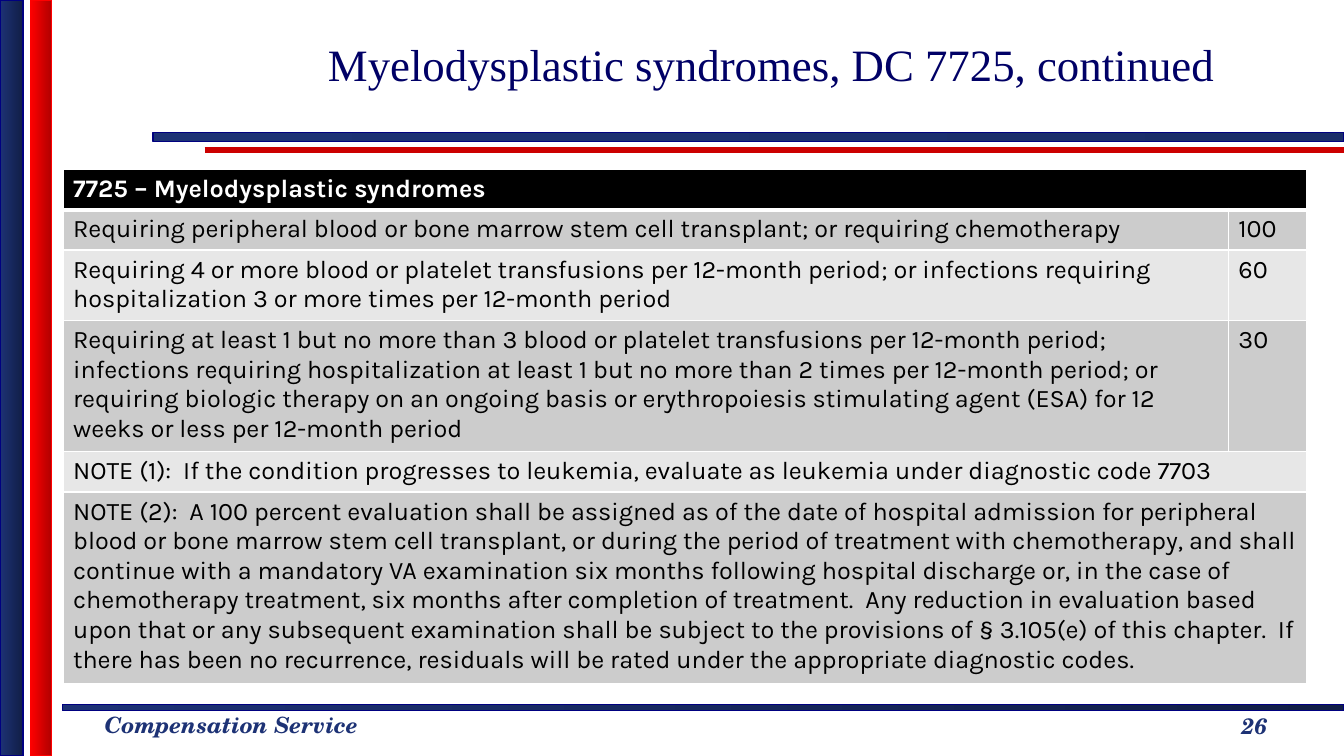
from lxml import etree
from pptx import Presentation
from pptx.dml.color import RGBColor
from pptx.enum.shapes import MSO_CONNECTOR, MSO_SHAPE
from pptx.enum.text import MSO_ANCHOR, PP_ALIGN
from pptx.oxml.ns import qn
from pptx.util import Pt

COLORS = {
    "navy": "1D3275", "navy_dark": "111E46", "navy_mid": "1A2D69",
    "edge": "000080", "red": "FF0000", "red_dark": "B20000", "rule": "CC0000",
    "title": "000066", "black": "000000", "white": "FFFFFF",
    "band_dark": "CCCCCC", "band_light": "E7E7E7",
}
W, H = 960, 540

# Criterion and rating; a row without a rating spans both columns
RATINGS = [
    ("7725 – Myelodysplastic syndromes", None, 28.8),
    ("Requiring peripheral blood or bone marrow stem cell transplant; or "
     "requiring chemotherapy", "100", 28.8),
    ("Requiring 4 or more blood or platelet transfusions per 12-month period; "
     "or infections requiring hospitalization 3 or more times per 12-month "
     "period", "60", 50.4),
    ("Requiring at least 1 but no more than 3 blood or platelet transfusions "
     "per 12-month period; infections requiring hospitalization at least 1 but "
     "no more than 2 times per 12-month period; or requiring biologic therapy "
     "on an ongoing basis or erythropoiesis stimulating agent (ESA) for 12 "
     "weeks or less per 12-month period", "30", 93.6),
    ("NOTE (1):  If the condition progresses to leukemia, evaluate as leukemia "
     "under diagnostic code 7703", None, 28.8),
    ("NOTE (2):  A 100 percent evaluation shall be assigned as of the date of "
     "hospital admission for peripheral blood or bone marrow stem cell "
     "transplant, or during the period of treatment with chemotherapy, and "
     "shall continue with a mandatory VA examination six months following "
     "hospital discharge or, in the case of chemotherapy treatment, six months "
     "after completion of treatment.  Any reduction in evaluation based upon "
     "that or any subsequent examination shall be subject to the provisions of "
     "§ 3.105(e) of this chapter.  If there has been no recurrence, residuals "
     "will be rated under the appropriate diagnostic codes.", None, 136.8),
]


def rgb(name):
    return RGBColor.from_string(COLORS[name])


def add_run(p, text, size, font, color, bold=False, italic=False):
    r = p.add_run()
    r.text = text
    r.font.size, r.font.name = Pt(size), font
    r.font.bold, r.font.italic = bold, italic
    r.font.color.rgb = rgb(color)


def add_bar(s, x, y, w, h, start, end, edge):
    bar = s.shapes.add_shape(MSO_SHAPE.RECTANGLE, Pt(x), Pt(y), Pt(w), Pt(h))
    bar.shadow.inherit = False
    bar.fill.gradient()
    bar.fill.gradient_angle = 0
    for stop, color in zip(bar.fill.gradient_stops, (start, end)):
        stop.color.rgb = rgb(color)
    bar.line.color.rgb = rgb(edge)
    bar.line.width = Pt(1)


def add_side_bars(s, x, y, h):
    add_bar(s, x, y, 16.6, h, "navy", "navy_dark", "edge")
    add_bar(s, x + 21.6, y, 15.1, h, "red", "red_dark", "red")


def add_header(s, x, y, w, h, text):
    # Title
    title = s.shapes.title
    title.left, title.top, title.width, title.height = (
        Pt(x + 59), Pt(y), Pt(765.4), Pt(h - 10))
    tf = title.text_frame
    tf.word_wrap = True
    tf.vertical_anchor = MSO_ANCHOR.MIDDLE
    p = tf.paragraphs[0]
    p.alignment = PP_ALIGN.CENTER
    add_run(p, text, 32, "Times New Roman", "title")
    # Red rule, then blue bar
    rule = s.shapes.add_connector(MSO_CONNECTOR.STRAIGHT, Pt(x + 36.8),
                                  Pt(y + h + 6.5), Pt(x + w), Pt(y + h + 6.5))
    rule.line.color.rgb = rgb("rule")
    rule.line.width = Pt(4)
    etree.SubElement(rule._element.spPr, qn("a:effectLst"))
    add_bar(s, x, y + h - 6, w, 6.5, "navy", "navy_mid", "edge")


def set_borders(cell, bottom):
    tcPr = cell._tc.get_or_add_tcPr()
    sides = {"lnL": 1, "lnR": 1, "lnT": 1, "lnB": bottom}
    for i, (side, width) in enumerate(sides.items()):
        ln = etree.Element(qn(f"a:{side}"), w=str(Pt(width)))
        fill = etree.SubElement(ln, qn("a:solidFill"))
        etree.SubElement(fill, qn("a:srgbClr"), val=COLORS["white"])
        tcPr.insert(i, ln)


def add_ratings(s, x, y, w):
    rating_w = 56
    heights = [h for _, _, h in RATINGS]
    table = s.shapes.add_table(len(RATINGS), 2, Pt(x), Pt(y), Pt(w),
                               Pt(sum(heights))).table
    table.columns[0].width = Pt(w - rating_w)
    table.columns[1].width = Pt(rating_w)
    for i, (criterion, rating, h) in enumerate(RATINGS):
        table.rows[i].height = Pt(h)
        head = i == 0
        band = "black" if head else "band_dark" if i % 2 else "band_light"
        for j, text in enumerate((criterion, rating)):
            cell = table.cell(i, j)
            cell.fill.solid()
            cell.fill.fore_color.rgb = rgb(band)
            set_borders(cell, 3 if head else 1)
            if text:
                add_run(cell.text_frame.paragraphs[0], text, 18, "Karla",
                        "white" if head else "black", bold=head)
        if rating is None:
            table.cell(i, 0).merge(table.cell(i, 1))


def add_footer(s, x, y, w):
    add_bar(s, x, y, w, 4.3, "navy", "navy_dark", "edge")
    # Service name on the left, page number on the right
    labels = [("Compensation Service", x + 23, y + 0.7, 203, 26.6, False),
              ("26", x + w - 128, y - 3, 128, 36, True)]
    for text, left, top, width, height, centred in labels:
        box = s.shapes.add_textbox(Pt(left), Pt(top), Pt(width), Pt(height))
        tf = box.text_frame
        tf.word_wrap = centred
        p = tf.paragraphs[0]
        if centred:
            tf.vertical_anchor = MSO_ANCHOR.MIDDLE
            p.alignment = PP_ALIGN.CENTER
        add_run(p, text, 16, "TeX Gyre Schola", "navy", bold=True, italic=True)


def main():
    prs = Presentation()
    prs.slide_width, prs.slide_height = Pt(W), Pt(H)
    s = prs.slides.add_slide(prs.slide_layouts[5])
    add_side_bars(s, 0, 0, H)
    add_header(s, 109.4, 0, W - 109.4, 100.6,
               "Myelodysplastic syndromes, DC 7725, continued")
    add_ratings(s, 45, 121, 888.4)
    add_footer(s, 44.6, 503.4, W - 44.6)
    prs.save("out.pptx")


if __name__ == "__main__":
    main()
